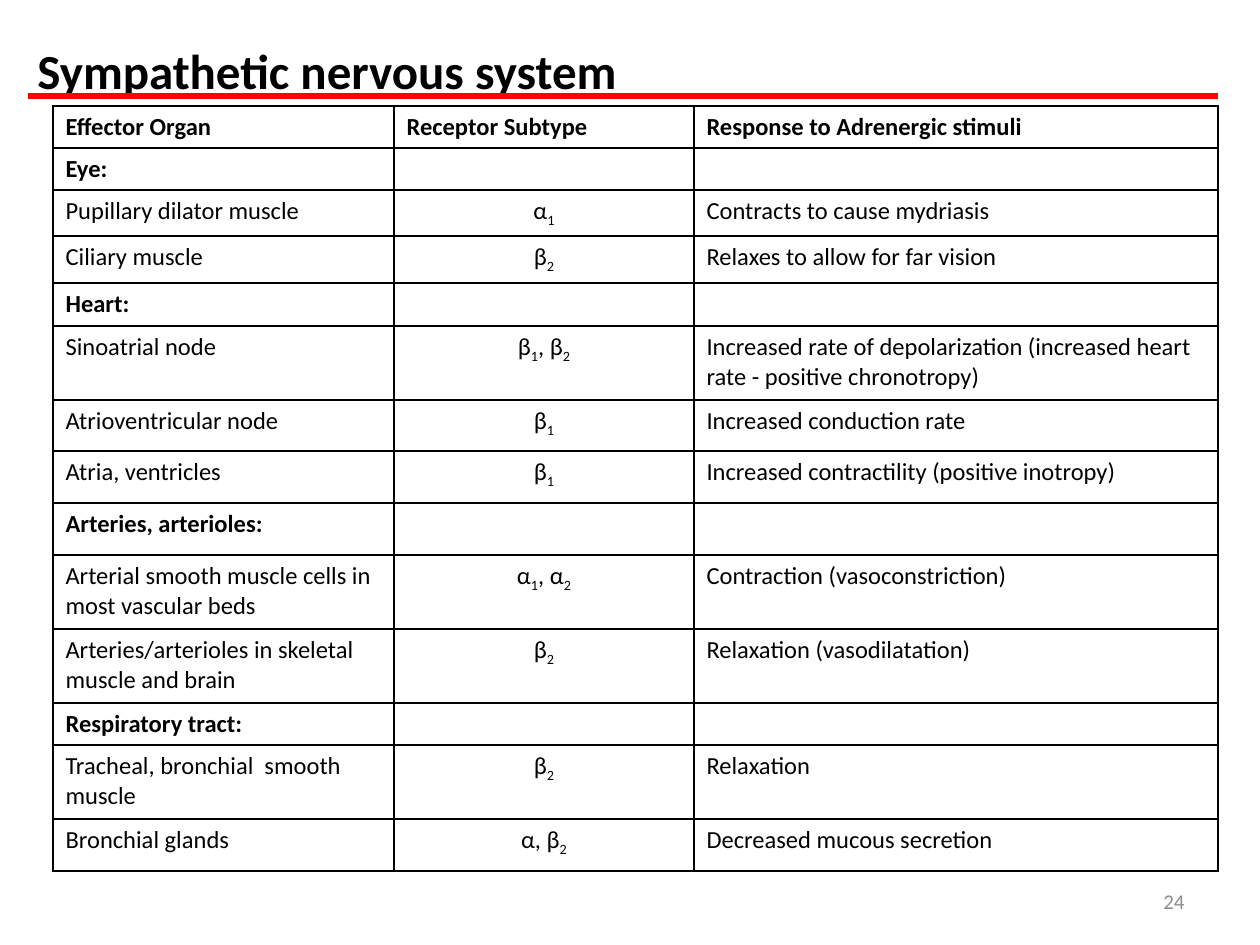
from dataclasses import dataclass

from lxml.etree import SubElement
from pptx import Presentation
from pptx.dml.color import RGBColor as RGB
from pptx.enum.shapes import MSO_CONNECTOR as CONN
from pptx.enum.text import MSO_ANCHOR as ANCHOR, PP_ALIGN as ALIGN
from pptx.oxml.ns import qn
from pptx.util import Pt

EMU_PER_PX = 914400 / 126


@dataclass(frozen=True)
class Theme:
    font: str = "Calibri"
    ink: RGB = RGB(0, 0, 0)
    paper: RGB = RGB(255, 255, 255)
    accent: RGB = RGB(255, 0, 0)
    muted: RGB = RGB(0x8C, 0x8C, 0x8C)
    title: int = 28
    body: int = 14
    small: int = 12
    rule: int = 3
    border: int = 1


THEME = Theme()

COL_WIDTHS = [341, 300, 524]
HEADER = ("Effector Organ", "Receptor Subtype", "Response to Adrenergic stimuli")

# Height, organ, receptors (an underscore lowers the next character), response.
# A row without receptors is a group heading.
ROWS = [
    (42, "Eye:", "", ""),
    (46, "Pupillary dilator muscle", "α_1", "Contracts to cause mydriasis"),
    (47, "Ciliary muscle", "β_2", "Relaxes to allow for far vision"),
    (43, "Heart:", "", ""),
    (74, "Sinoatrial node", "β_1, β_2",
     "Increased rate of depolarization (increased heart rate - positive chronotropy)"),
    (51, "Atrioventricular node", "β_1", "Increased conduction rate"),
    (52, "Atria, ventricles", "β_1", "Increased contractility (positive inotropy)"),
    (52, "Arteries, arterioles:", "", ""),
    (74, "Arterial smooth muscle cells in most vascular beds", "α_1, α_2",
     "Contraction (vasoconstriction)"),
    (74, "Arteries/arterioles in skeletal muscle and brain", "β_2",
     "Relaxation (vasodilatation)"),
    (42, "Respiratory tract:", "", ""),
    (74, "Tracheal, bronchial  smooth muscle", "β_2", "Relaxation"),
    (52, "Bronchial glands", "α, β_2", "Decreased mucous secretion"),
]
HEADER_HEIGHT = 42


def px(n):
    return round(n * EMU_PER_PX)


def style(p, size, color, bold=False, align=ALIGN.LEFT):
    p.alignment = align
    p.font.name = THEME.font
    p.font.size = Pt(size)
    p.font.bold = bold
    p.font.color.rgb = color


def add_runs(p, text):
    """Add text, setting each character after an underscore as a subscript."""
    first, *rest = text.split("_")
    p.add_run().text = first
    for part in rest:
        r = p.add_run()
        r.text = part[0]
        r.font._element.set("baseline", "-25000")
        if part[1:]:
            p.add_run().text = part[1:]


def add_text(slide, box, text, size, color, **look):
    tf = slide.shapes.add_textbox(*map(px, box)).text_frame
    tf.word_wrap = True
    tf.paragraphs[0].text = text
    style(tf.paragraphs[0], size, color, **look)
    return tf


def add_title(slide, box, text):
    """Place the title with a full-width rule near its foot."""
    x, y, w, h = box
    add_text(slide, (x - 3, y, w, h), text, THEME.title, THEME.ink, bold=True)
    rule_y = px(y + 62)
    rule = slide.shapes.add_connector(CONN.STRAIGHT, px(x), rule_y, px(x + w), rule_y)
    rule.line.color.rgb = THEME.accent
    rule.line.width = Pt(THEME.rule)
    SubElement(rule._element.spPr, qn("a:effectLst"))


def add_borders(cell):
    tc_pr = cell._tc.get_or_add_tcPr()
    for side in ("lnL", "lnR", "lnT", "lnB"):
        ln = SubElement(tc_pr, qn(f"a:{side}"), w=str(Pt(THEME.border)))
        fill = SubElement(ln, qn("a:solidFill"))
        SubElement(fill, qn("a:srgbClr"), val=str(THEME.ink))


def fill_cell(cell, text, bold, align):
    add_borders(cell)
    cell.fill.solid()
    cell.fill.fore_color.rgb = THEME.paper
    p = cell.text_frame.paragraphs[0]
    style(p, THEME.body, THEME.ink, bold, align)
    if text:
        add_runs(p, text)
    else:
        SubElement(p._p, qn("a:endParaRPr"), sz=str(THEME.body * 100))


def add_receptor_table(slide, left, top):
    rows = [(HEADER_HEIGHT, *HEADER), *ROWS]
    size = (sum(COL_WIDTHS), sum(row[0] for row in rows))
    table = slide.shapes.add_table(
        len(rows), len(COL_WIDTHS), *map(px, (left, top, *size))).table
    table.first_row = table.horz_banding = False
    for col, width in zip(table.columns, COL_WIDTHS):
        col.width = px(width)
    for i, (height, *texts) in enumerate(rows):
        table.rows[i].height = px(height)
        bold = i == 0 or not texts[1]
        for j, text in enumerate(texts):
            align = ALIGN.CENTER if i and j == 1 else ALIGN.LEFT
            fill_cell(table.cell(i, j), text, bold, align)


def add_page_number(slide, box, number):
    tf = add_text(slide, box, str(number), THEME.small, THEME.muted, align=ALIGN.RIGHT)
    tf.vertical_anchor = ANCHOR.MIDDLE


def main():
    prs = Presentation()
    prs.slide_width, prs.slide_height = px(1260), px(945)
    slide = prs.slides.add_slide(prs.slide_layouts[6])
    add_page_number(slide, (903, 876, 294, 50), 24)
    add_title(slide, (28, 34, 1190, 72), "Sympathetic nervous system")
    add_receptor_table(slide, 53, 106)
    prs.save("out.pptx")


if __name__ == "__main__":
    main()
